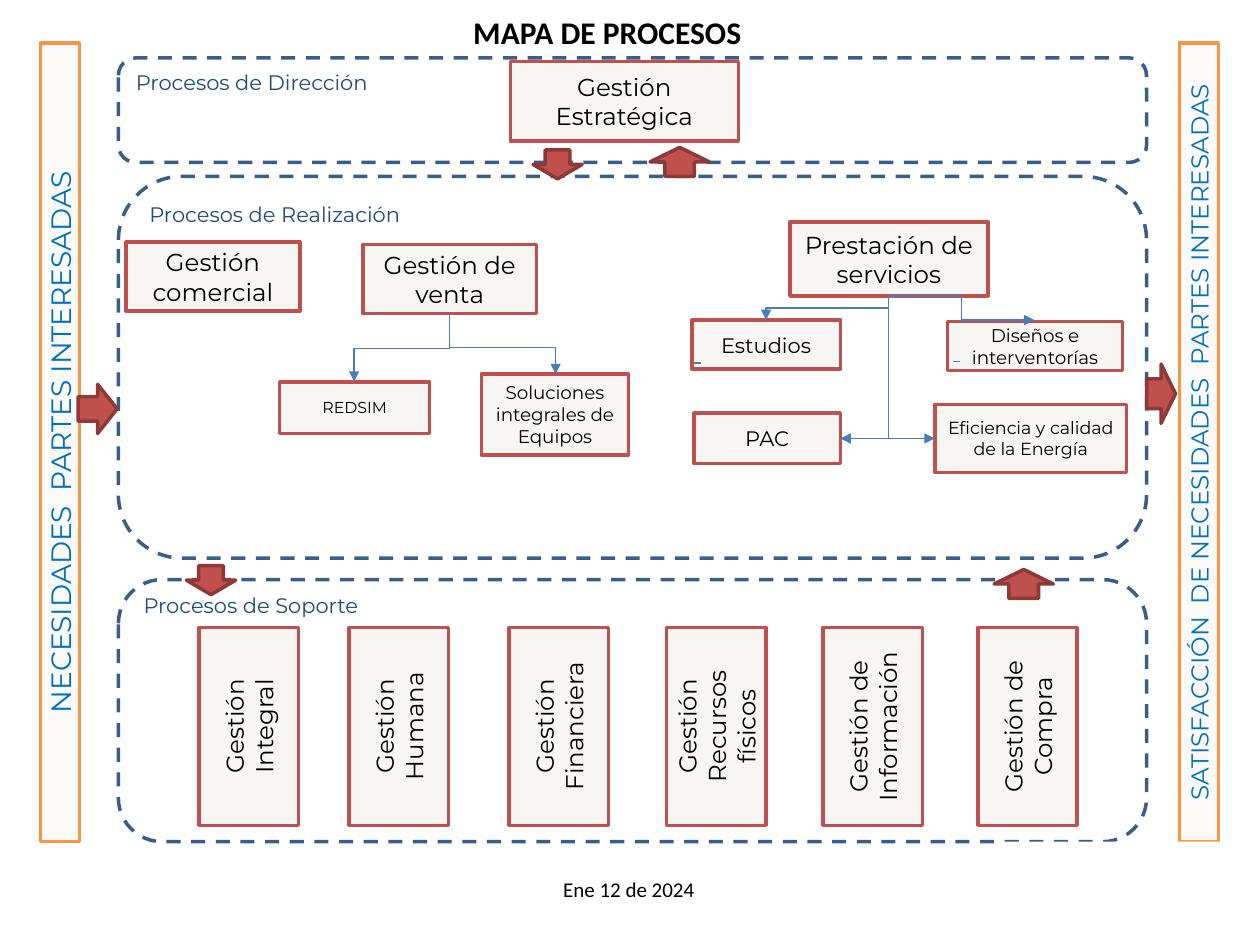
from lxml import etree
from pptx import Presentation
from pptx.dml.color import RGBColor
from pptx.enum.dml import MSO_LINE
from pptx.enum.shapes import MSO_CONNECTOR, MSO_SHAPE
from pptx.enum.text import MSO_ANCHOR, MSO_AUTO_SIZE, PP_ALIGN
from pptx.oxml.ns import qn
from pptx.util import Inches, Pt

BLACK = RGBColor(0x00, 0x00, 0x00)
WHITE = RGBColor(0xFF, 0xFF, 0xFF)
NAVY = RGBColor(0x1F, 0x49, 0x7D)
DASH_BLUE = RGBColor(0x39, 0x5E, 0x89)
LINK_BLUE = RGBColor(0x4A, 0x7D, 0xBA)
BRIGHT_BLUE = RGBColor(0x00, 0x70, 0xC0)
RED = RGBColor(0xC0, 0x50, 0x4D)
DARK_RED = RGBColor(0x8C, 0x3A, 0x38)
ORANGE = RGBColor(0xF7, 0x96, 0x46)
CREAM = RGBColor(0xF7, 0xF6, 0xF2)
PALE = RGBColor(0xFB, 0xFA, 0xF8)


class ProcessMap:
    body_font = "Montserrat"
    caption_font = "Calibri"

    def __init__(self, slide):
        self.slide = slide

    def label(self, frame, text, align, anchor, color=BLACK, **font_format):
        frame_format = {"word_wrap": True, "auto_size": MSO_AUTO_SIZE.NONE,
                        "vertical_anchor": anchor}
        for name, value in frame_format.items():
            setattr(frame, name, value)
        frame.text = text
        paragraph = frame.paragraphs[0]
        paragraph.alignment = align
        font = paragraph.runs[0].font
        for name, value in font_format.items():
            setattr(font, name, value)
        font.color.rgb = color

    def outline(self, preset, left, top, width, height, fill=None, line=None):
        shape = self.slide.shapes.add_shape(
            preset, *map(Inches, (left, top, width, height)))
        shape.shadow.inherit = False
        if fill is None:
            shape.fill.background()
        else:
            shape.fill.solid()
            shape.fill.fore_color.rgb = fill
        if line is None:
            shape.line.fill.background()
        else:
            shape.line.color.rgb = line
            shape.line.width = Pt(2)
        return shape

    def title(self, text, left, top, width, height):
        heading = self.slide.shapes.title
        place = {"left": left, "top": top, "width": width, "height": height}
        for name, value in place.items():
            setattr(heading, name, Inches(value))
        self.label(heading.text_frame, text, PP_ALIGN.CENTER, MSO_ANCHOR.TOP,
                   size=Pt(18), bold=True, name=self.caption_font)

    def date(self, text, left, top, width, height):
        caption = self.slide.shapes.add_textbox(
            *map(Inches, (left, top, width, height)))
        self.label(caption.text_frame, text, PP_ALIGN.RIGHT, MSO_ANCHOR.TOP,
                   size=Pt(12), name=self.caption_font)

    def region(self, text, top, height, inset_top=0.05):
        area = self.outline(MSO_SHAPE.ROUNDED_RECTANGLE, 0.94, top, 8.16, height,
                            line=DASH_BLUE)
        area.line.dash_style = MSO_LINE.DASH
        area.text_frame.margin_top = Inches(inset_top)
        self.label(area.text_frame, text, PP_ALIGN.LEFT, MSO_ANCHOR.TOP, NAVY,
                   size=Pt(12), name=self.body_font)

    def box(self, text, left, top, width, height, size=14,
            fill=CREAM, line=RED, color=BLACK):
        process = self.outline(MSO_SHAPE.RECTANGLE, left, top, width, height, fill, line)
        self.label(process.text_frame, text, PP_ALIGN.CENTER, MSO_ANCHOR.MIDDLE,
                   color, size=Pt(size), name=self.body_font)
        return process

    def upright_box(self, text, left, top, width, height, **style):
        """Box whose text reads upwards; the frame is given as it is seen."""
        shift = (height - width) / 2
        process = self.box(text, left - shift, top + shift, height, width, **style)
        process.rotation = 270

    def block_arrow(self, preset, *frame):
        self.outline(preset, *frame, fill=RED, line=DARK_RED)

    def connector(self, kind, start, end, arrow=False):
        link = self.slide.shapes.add_connector(kind, *map(Inches, (*start, *end)))
        link.line.color.rgb = LINK_BLUE
        link.line.width = Pt(0.75)
        properties = link._element.spPr
        etree.SubElement(properties, qn("a:effectLst"))
        if arrow:
            outline = properties.find(qn("a:ln"))
            etree.SubElement(outline, qn("a:tailEnd")).set("type", "triangle")
        return link

    def elbow(self, start, end, bends=2, down_first=False):
        """Elbow arrow to the right or, if down_first, downwards at its start."""
        rotation = 0
        if down_first:
            (x1, y1), (x2, y2) = start, end
            middle_x, middle_y = (x1 + x2) / 2, (y1 + y2) / 2
            half_x, half_y = abs(y2 - y1) / 2, abs(x2 - x1) / 2
            rotation = 90
            if x2 > x1:
                rotation, half_x = 270, -half_x
            start = middle_x - half_x, middle_y - half_y
            end = middle_x + half_x, middle_y + half_y
        link = self.connector(MSO_CONNECTOR.ELBOW, start, end, arrow=True)
        properties = link._element.spPr
        properties.find(qn("a:prstGeom")).set("prst", f"bentConnector{bends + 1}")
        if rotation:
            properties.find(qn("a:xfrm")).set("rot", str(rotation * 60000))


def main():
    deck = Presentation()
    deck.slide_width, deck.slide_height = Inches(10), Inches(7.5)
    chart = ProcessMap(deck.slides.add_slide(deck.slide_layouts[5]))

    chart.title("MAPA DE PROCESOS", 1.85, 0.05, 5.94, 0.4)
    chart.region("Procesos de Realización", 1.4, 3.03)
    chart.region("Procesos de Dirección", 0.46, 0.83)
    chart.region("Procesos de Soporte", 4.6, 2.08, inset_top=0)

    for text, left, size in (
        ("NECESIDADES  PARTES INTERESADAS", 0.32, 16),
        ("SATISFACCIÓN  DE NECESIDADES  PARTES INTERESADAS", 9.36, 14),
    ):
        chart.upright_box(text, left, 0.34, 0.31, 6.34, size=size,
                          fill=PALE, line=ORANGE, color=BRIGHT_BLUE)

    for text, left in (
        ("Gestión Integral", 1.58),
        ("Gestión Humana", 2.77),
        ("Gestión Financiera", 4.04),
        ("Gestión Recursos físicos", 5.29),
        ("Gestión de Información", 6.53),
        ("Gestión de Compra", 7.76),
    ):
        chart.upright_box(text, left, 4.98, 0.79, 1.57)

    for preset, *frame in (
        (MSO_SHAPE.RIGHT_ARROW, 9.1, 2.89, 0.23, 0.47),
        (MSO_SHAPE.RIGHT_ARROW, 0.62, 3.05, 0.31, 0.39),
        (MSO_SHAPE.DOWN_ARROW, 4.23, 1.19, 0.39, 0.23),
        (MSO_SHAPE.DOWN_ARROW, 1.48, 4.49, 0.39, 0.23),
        (MSO_SHAPE.UP_ARROW, 5.16, 1.17, 0.47, 0.23),
        (MSO_SHAPE.UP_ARROW, 7.89, 4.52, 0.47, 0.23),
    ):
        chart.block_arrow(preset, *frame)

    chart.date("Ene 12 de 2024", 3.54, 6.91, 2.07, 0.3)
    chart.outline(MSO_SHAPE.RECTANGLE, 7.89, 6.68, 1.94, 0.58, fill=WHITE)

    for process in (
        ("Gestión Estratégica", 4.05, 0.49, 1.81, 0.63),
        ("Gestión comercial", 1, 1.92, 1.38, 0.55),
        ("Gestión de venta", 2.88, 1.94, 1.38, 0.55),
        ("Prestación de servicios", 6.27, 1.76, 1.57, 0.59),
        ("REDSIM", 2.22, 3.03, 1.19, 0.41, 9),
        ("Soluciones integrales de Equipos", 3.82, 2.97, 1.17, 0.64, 10.5),
        ("Estudios", 5.49, 2.54, 1.18, 0.39, 12),
        ("Diseños e interventorías", 7.52, 2.55, 1.39, 0.39, 10.5),
        ("PAC", 5.51, 3.28, 1.16, 0.4, 12),
        ("Eficiencia y calidad de la Energía", 7.42, 3.21, 1.52, 0.54, 10),
    ):
        chart.box(*process)

    for start, end in (((7.62, 2.87), (7.56, 2.87)), ((5.56, 2.88), (5.51, 2.88))):
        chart.connector(MSO_CONNECTOR.STRAIGHT, start, end)

    services = (7.05, 2.35)
    chart.elbow((3.57, 2.5), (2.81, 3.03), down_first=True)
    chart.elbow((3.56, 2.76), (4.41, 2.97), bends=1)
    chart.elbow(services, (6.08, 2.54), down_first=True)
    chart.elbow(services, (8.21, 2.54))
    chart.elbow((7.05, 2.44), (6.67, 3.48), bends=1, down_first=True)
    chart.elbow(services, (7.42, 3.48), bends=1, down_first=True)

    deck.save("out.pptx")


if __name__ == "__main__":
    main()
